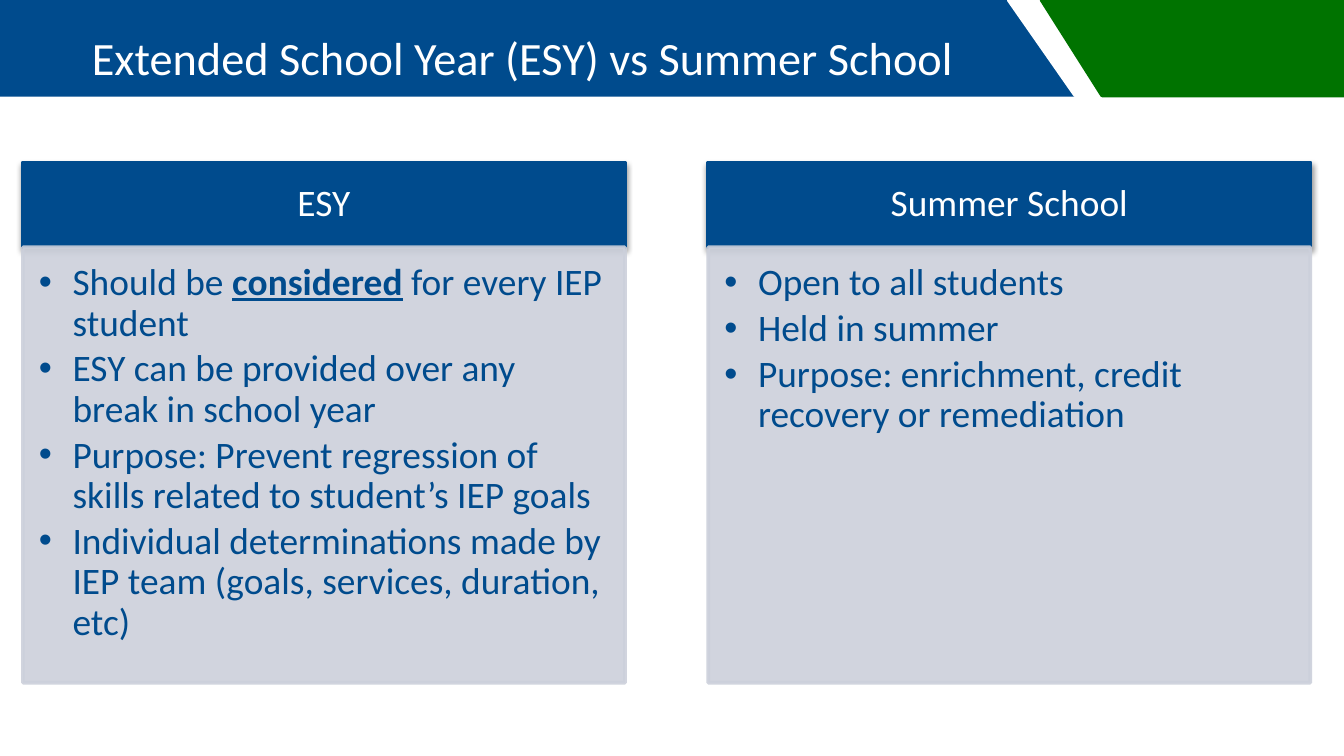
import pptx
import pptx.dml.color
import pptx.enum.shapes
import pptx.enum.text
import pptx.oxml
import pptx.oxml.ns
import pptx.util

SLIDE_WIDTH = pptx.util.Inches(10)
SLIDE_HEIGHT = SLIDE_WIDTH * 9 // 16
GRID = SLIDE_WIDTH // 100
BLUE, GREEN, GRAY, WHITE = "004B8D", "007300", "CCD0DB", "FFFFFF"
SHAPES = pptx.enum.shapes.MSO_SHAPE
ANCHOR = pptx.enum.text.MSO_ANCHOR
ALIGN = pptx.enum.text.PP_ALIGN
NAMESPACE = pptx.oxml.ns.nsdecls("a")

ESY_POINTS = [
    [("Should be ", False), ("considered", True), (" for every IEP student", False)],
    [("ESY can be provided over any break in school year", False)],
    [("Purpose: Prevent regression of skills related to student’s IEP goals", False)],
    [("Individual determinations made by IEP team (goals, services, duration, etc)", False)],
]
SUMMER_POINTS = [
    [("Open to all students", False)],
    [("Held in summer", False)],
    [("Purpose: enrichment, credit recovery or remediation", False)],
]


def color(value):
    return pptx.dml.color.RGBColor.from_string(value)


def place(shape, box):
    shape.left, shape.top, shape.width, shape.height = [round(n * GRID) for n in box]


def paint(shape, fill, outlined=True):
    shape.shadow.inherit = False
    shape.fill.solid()
    shape.fill.fore_color.rgb = color(fill)
    if outlined:
        shape.line.color.rgb = color(fill)
        shape.line.width = pptx.util.Pt(2)
    else:
        shape.line.fill.background()


def add_block(slide, kind, box, fill, outlined=True):
    shape = slide.shapes.add_shape(kind, 0, 0, 0, 0)
    place(shape, box)
    paint(shape, fill, outlined)
    return shape


def bring_to_front(shape):
    shape.element.getparent().append(shape.element)


def format_frame(shape, anchor, margins):
    frame = shape.text_frame
    frame.word_wrap = True
    frame.auto_size = pptx.enum.text.MSO_AUTO_SIZE.NONE
    frame.vertical_anchor = anchor
    (frame.margin_left, frame.margin_top,
     frame.margin_right, frame.margin_bottom) = [round(n * GRID) for n in margins]
    return frame


def add_run(paragraph, text, size, fill, strong=False):
    run = paragraph.add_run()
    run.text = text
    run.font.name = "Calibri"
    run.font.size = pptx.util.Pt(size)
    run.font.color.rgb = color(fill)
    run.font.bold = strong
    run.font.underline = strong


def add_banner(slide, box, title):
    left, top, width, height = box
    add_block(slide, SHAPES.RECTANGLE, box, BLUE, outlined=False)
    middle = top + height / 2
    for center, length, fill in [(87.45, 24.8, WHITE), (88.75, 22.5, GREEN)]:
        breadth = 7.1
        flag_box = (left + center - breadth / 2, middle - length / 2, breadth, length)
        flag = add_block(slide, SHAPES.FLOWCHART_MANUAL_INPUT, flag_box, fill)
        flag.rotation = 270

    heading = slide.shapes.title
    place(heading, (left + 3.3, top + 1.8, width * 0.7, 6.5))
    paragraph = format_frame(heading, ANCHOR.TOP, (1, 0.5, 1, 0.5)).paragraphs[0]
    paragraph.alignment = ALIGN.CENTER
    paragraph._p.get_or_add_pPr().set("marL", str(round(1.2 * GRID)))
    add_run(paragraph, title, 24.8, WHITE)
    bring_to_front(heading)


def add_header(slide, box, label):
    header = add_block(slide, SHAPES.RECTANGLE, box, BLUE)
    effects = header.element.spPr.find(pptx.oxml.ns.qn("a:effectLst"))
    effects.append(pptx.oxml.parse_xml(
        f'<a:outerShdw {NAMESPACE} blurRad="39370" dist="20320" dir="5400000" rotWithShape="0">'
        '<a:srgbClr val="000000"><a:alpha val="38000"/></a:srgbClr></a:outerShdw>'))
    paragraph = format_frame(header, ANCHOR.MIDDLE, (1.6, 0.9, 1.6, 0.9)).paragraphs[0]
    paragraph.alignment = ALIGN.CENTER
    paragraph.line_spacing = 0.9
    add_run(paragraph, label, 20, WHITE)


def fill_list(body, box, points):
    place(body, box)
    paint(body, GRAY)
    for tone in body.element.iter(pptx.oxml.ns.qn("a:srgbClr")):
        tone.append(pptx.oxml.parse_xml(f'<a:alpha {NAMESPACE} val="90000"/>'))
    frame = format_frame(body, ANCHOR.TOP, (1.2, 1.2, 1.6, 1.7))
    for index, point in enumerate(points):
        paragraph = frame.add_paragraph() if index else frame.paragraphs[0]
        properties = paragraph._p.get_or_add_pPr()
        properties.set("marL", str(round(2.5 * GRID)))
        properties.set("indent", str(round(-2.5 * GRID)))
        paragraph.line_spacing = 0.9
        paragraph.space_before = pptx.util.Pt(0)
        paragraph.space_after = pptx.util.Pt(3)
        for text, strong in point:
            add_run(paragraph, text, 20, BLUE, strong)
    bring_to_front(body)


def add_comparison_column(slide, box, label, body, points):
    left, top, width, height = box
    header_height = 6.3
    add_header(slide, (left, top, width, header_height), label)
    fill_list(body, (left, top + header_height, width, height - header_height), points)


def main():
    presentation = pptx.Presentation()
    presentation.slide_width = SLIDE_WIDTH
    presentation.slide_height = SLIDE_HEIGHT
    slide = presentation.slides.add_slide(presentation.slide_layouts[3])
    bodies = [slide.placeholders[1], slide.placeholders[2]]

    add_banner(slide, (0, -0.1, 100, 7.3), "Extended School Year (ESY) vs Summer School")
    columns = [("ESY", ESY_POINTS), ("Summer School", SUMMER_POINTS)]
    for index, (label, points) in enumerate(columns):
        box = (1.7 + 51 * index, 12.1, 44.8, 38.7)
        add_comparison_column(slide, box, label, bodies[index], points)
    presentation.save("out.pptx")


if __name__ == "__main__":
    main()
